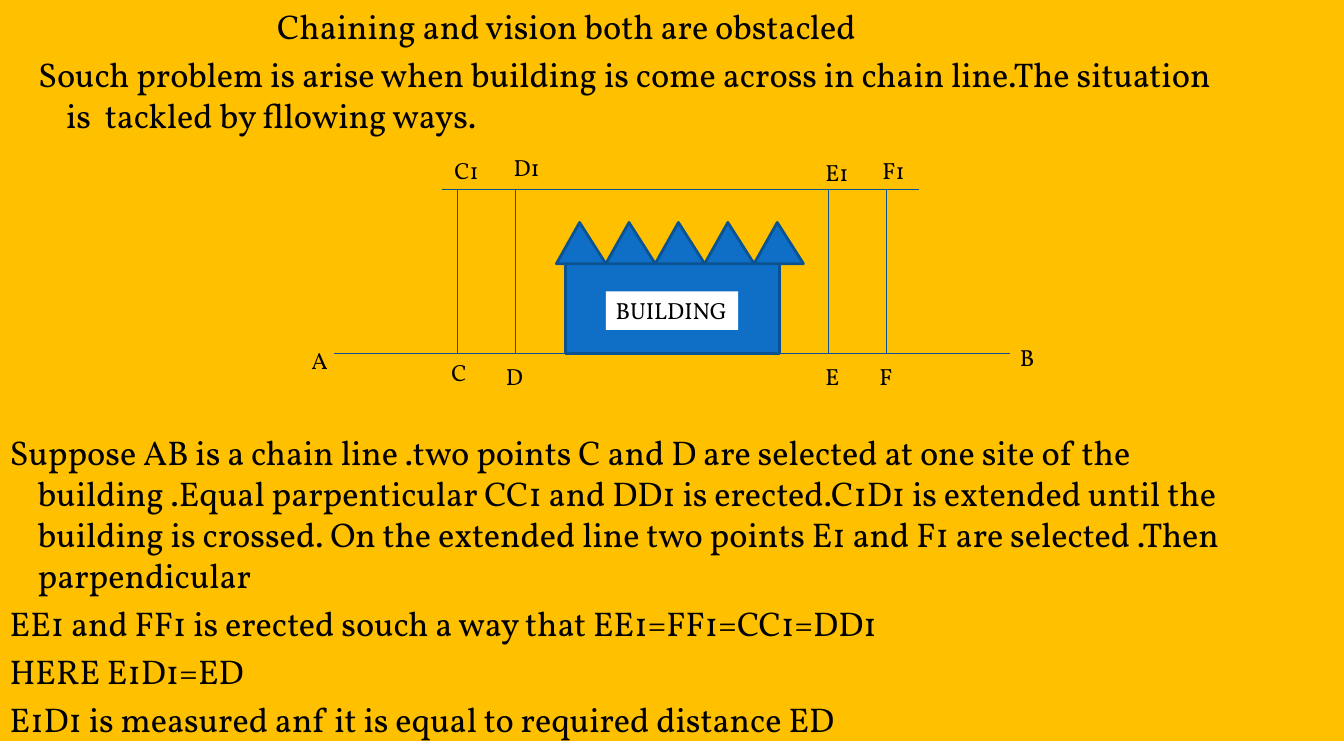
from dataclasses import dataclass

from lxml.etree import SubElement
from pptx import Presentation
from pptx.dml.color import RGBColor
from pptx.enum.shapes import MSO_CONNECTOR as LINE, MSO_SHAPE as SHAPE
from pptx.enum.text import MSO_ANCHOR as ANCHOR, MSO_AUTO_SIZE as AUTO, PP_ALIGN as ALIGN
from pptx.oxml.ns import qn
from pptx.util import Cm, Pt


@dataclass(frozen=True)
class Theme:
    font: str = "Vollkorn"
    body: float = 25
    label: float = 17
    ink: str = "000000"
    ground: str = "FFC000"
    wall: str = "0F6FC6"
    edge: str = "0B5292"
    line: str = "095295"
    sign: str = "FFFFFF"


T = Theme()
SIZE = (34.54, 19.05)
TEXT_RIGHT = 31.62
HANGING = 0.72

TITLE = "Chaining and vision both are obstacled"
INTRO = [
    "Souch problem is arise when building is come across in chain line.The situation "
    "is  tackled by fllowing ways.",
]
METHOD = [
    "Suppose AB is a chain line .two points C and D are selected at one site of the "
    "building .Equal parpenticular CC1 and DD1 is erected.C1D1 is extended until the "
    "building is crossed. On the extended line two points E1 and F1 are selected .Then "
    "parpendicular",
    "EE1 and FF1 is erected souch a way that EE1=FF1=CC1=DD1",
    "HERE E1D1=ED",
    "E1D1 is measured anf it is equal to required distance ED",
]

CHAIN_Y, OFFSET_Y = 9.09, 4.88
CHAIN_ENDS = (8.59, 25.96)
OFFSET_ENDS = (11.35, 23.62)
STATIONS = (11.76, 13.26, 21.29, 22.78)
WALL_LEFT, WALL_TOP, WALL_WIDTH = 14.53, 6.78, 5.51
ROOF_LEFT, ROOF_TOP, GABLE, GABLES = 14.3, 5.72, 1.27, 5
SIGN = ("BUILDING", 15.57, 7.49, 3.4, 0.99)
LABELS = [
    ("A", 7.75, 8.76), ("B", 25.96, 8.69),
    ("C", 11.35, 9.09), ("D", 12.75, 9.17), ("E", 20.96, 9.17), ("F", 22.35, 9.17),
    ("C1", 11.43, 3.89), ("D1", 12.95, 3.81), ("E1", 20.96, 3.94), ("F1", 22.43, 3.89),
]


def color(value):
    return RGBColor.from_string(value)


def add_run(p, text, size):
    r = p.add_run()
    r.text = text
    r.font.name, r.font.size = T.font, Pt(size)
    r.font.color.rgb = color(T.ink)


def set_frame(tf, inset_x=0, inset_y=0):
    tf.word_wrap, tf.auto_size = True, AUTO.NONE
    tf.vertical_anchor = ANCHOR.TOP
    tf.margin_left = tf.margin_right = Cm(inset_x)
    tf.margin_top = tf.margin_bottom = Cm(inset_y)


def add_paragraphs(s, texts, left, top, height):
    sp = s.shapes.add_textbox(Cm(left), Cm(top), Cm(TEXT_RIGHT - left), Cm(height))
    tf = sp.text_frame
    set_frame(tf)
    for i, text in enumerate(texts):
        p = tf.paragraphs[0] if i == 0 else tf.add_paragraph()
        p.space_before = Pt(T.body * 0.2 if i else 0)
        pPr = p._p.get_or_add_pPr()
        pPr.set("marL", str(Cm(HANGING)))
        pPr.set("indent", str(-Cm(HANGING)))
        add_run(p, text, T.body)


def add_label(s, text, left, top):
    sp = s.shapes.add_textbox(Cm(left), Cm(top), Cm(1.2), Cm(0.99))
    set_frame(sp.text_frame, 0.25, 0.13)
    add_run(sp.text_frame.paragraphs[0], text, T.label)


def add_line(s, x1, y1, x2, y2):
    c = s.shapes.add_connector(LINE.STRAIGHT, Cm(x1), Cm(y1), Cm(x2), Cm(y2))
    c.line.color.rgb, c.line.width = color(T.line), Pt(0.75)
    SubElement(c._element.spPr, qn("a:effectLst"))


def add_block(s, kind, left, top, width, height, fill, edge=None):
    sp = s.shapes.add_shape(kind, Cm(left), Cm(top), Cm(width), Cm(height))
    sp.shadow.inherit = False
    sp.fill.solid()
    sp.fill.fore_color.rgb = color(fill)
    if edge:
        sp.line.color.rgb, sp.line.width = color(edge), Pt(2)
    else:
        sp.line.fill.background()
    return sp


def add_title(s):
    sp = s.shapes.title
    sp.left, sp.top, sp.width, sp.height = Cm(7.12), Cm(0.13), Cm(20), Cm(1.1)
    set_frame(sp.text_frame)
    p = sp.text_frame.paragraphs[0]
    p.alignment = ALIGN.LEFT
    add_run(p, TITLE, T.body)


def add_survey(s):
    add_block(s, SHAPE.RECTANGLE, WALL_LEFT, WALL_TOP, WALL_WIDTH,
              CHAIN_Y - WALL_TOP, T.wall, T.edge)
    add_line(s, CHAIN_ENDS[0], CHAIN_Y, WALL_LEFT, CHAIN_Y)
    add_line(s, WALL_LEFT + WALL_WIDTH, CHAIN_Y, CHAIN_ENDS[1], CHAIN_Y)
    add_line(s, OFFSET_ENDS[0], OFFSET_Y, OFFSET_ENDS[1], OFFSET_Y)
    for x in STATIONS:
        add_line(s, x, OFFSET_Y, x, CHAIN_Y)
    for i in range(GABLES):
        sp = add_block(s, SHAPE.ISOSCELES_TRIANGLE, ROOF_LEFT + i * GABLE, ROOF_TOP,
                       GABLE, WALL_TOP - ROOF_TOP, T.wall, T.edge)
        sp.adjustments[0] = 0.47
    text, *box = SIGN
    sp = add_block(s, SHAPE.RECTANGLE, *box, T.sign)
    set_frame(sp.text_frame, 0.25, 0.13)
    p = sp.text_frame.paragraphs[0]
    p.alignment = ALIGN.LEFT
    add_run(p, text, T.label)
    for label in LABELS:
        add_label(s, *label)


def main():
    prs = Presentation()
    prs.slide_width, prs.slide_height = map(Cm, SIZE)
    s = prs.slides.add_slide(prs.slide_layouts[5])
    s.background.fill.solid()
    s.background.fill.fore_color.rgb = color(T.ground)
    add_title(s)
    add_paragraphs(s, INTRO, 0.98, 1.36, 2.2)
    add_survey(s)
    add_paragraphs(s, METHOD, 0.25, 11.08, 7.9)
    prs.save("out.pptx")


if __name__ == "__main__":
    main()
